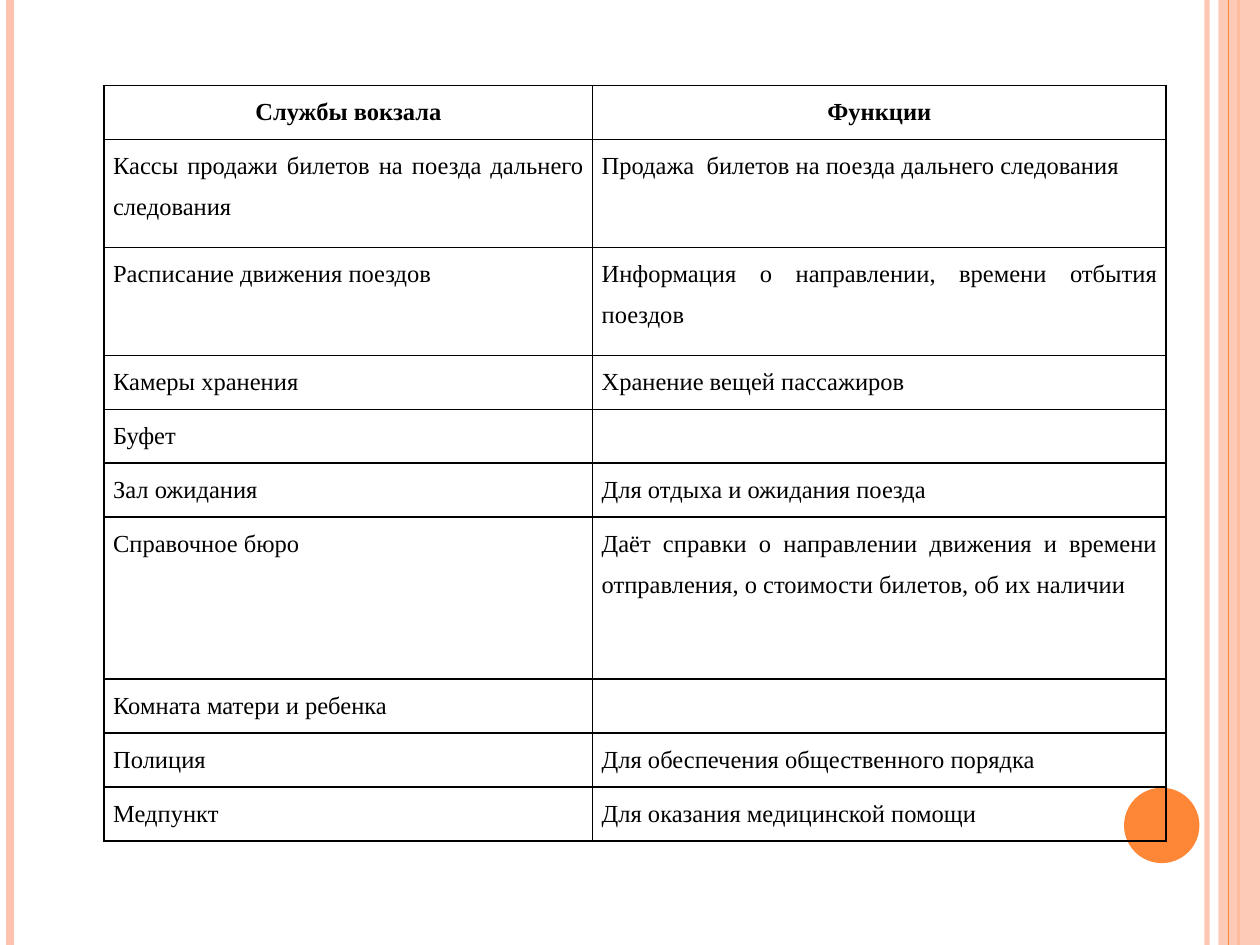
from collections import namedtuple
from dataclasses import dataclass

from lxml.etree import SubElement
from pptx import Presentation
from pptx.dml.color import RGBColor
from pptx.enum.shapes import MSO_CONNECTOR, MSO_SHAPE
from pptx.enum.text import PP_ALIGN
from pptx.oxml.ns import qn
from pptx.util import Cm, Pt

Box = namedtuple("Box", "left top width height")


@dataclass(frozen=True)
class Theme:
    ink: str = "000000"
    peach: str = "FEC3AE"
    orange: str = "FE8637"
    font: str = "Times New Roman"
    text_size: float = 14
    border: float = 1


THEME = Theme()
HEADER = ("Службы вокзала", "Функции")
SERVICES = [
    (2, "Кассы продажи билетов на поезда дальнего следования",
     "Продажа  билетов на поезда дальнего следования"),
    (2, "Расписание движения поездов",
     "Информация о направлении, времени отбытия поездов"),
    (1, "Камеры хранения", "Хранение вещей пассажиров"),
    (1, "Буфет", ""),
    (1, "Зал ожидания", "Для отдыха и ожидания поезда"),
    (3, "Справочное бюро",
     "Даёт справки о направлении движения и времени отправления, "
     "о стоимости билетов, об их наличии"),
    (1, "Комната матери и ребенка", ""),
    (1, "Полиция", "Для обеспечения общественного порядка"),
    (1, "Медпункт", "Для оказания медицинской помощи"),
]


def apply_format(target, values):
    for name, value in values.items():
        setattr(target, name, value)


def set_opacity(element, percent):
    if percent < 100:
        color = element.find(".//" + qn("a:srgbClr"))
        SubElement(color, qn("a:alpha"), val=str(percent * 1000))


def add_stripe(page, box, offset, color, weight, opacity=100):
    left = Cm(box.left + offset)
    stripe = page.shapes.add_connector(
        MSO_CONNECTOR.STRAIGHT, left, Cm(box.top), left, Cm(box.top + box.height))
    stripe.line.color.rgb = RGBColor.from_string(color)
    stripe.line.width = Pt(weight)
    properties = stripe.line._get_or_add_ln().getparent()
    SubElement(properties, qn("a:effectLst"))
    set_opacity(properties, opacity)


def add_plain_shape(page, kind, box, color, opacity=100):
    shape = page.shapes.add_shape(kind, *(Cm(length) for length in box))
    shape.shadow.inherit = False
    shape.fill.solid()
    shape.fill.fore_color.rgb = RGBColor.from_string(color)
    shape.line.fill.background()
    set_opacity(shape.element.spPr, opacity)


def draw_frame(page, box):
    right = box.left + box.width
    add_stripe(page, box, box.width - 1.07, THEME.peach, 3, 93)
    add_stripe(page, box, 0.2, THEME.peach, 4.5)
    add_stripe(page, box, box.width - 0.43, THEME.orange, 1.5)
    band = Box(right - 0.84, box.top, 0.84, box.height)
    add_plain_shape(page, MSO_SHAPE.RECTANGLE, band, THEME.peach, 87)
    add_stripe(page, box, box.width - 0.64, THEME.orange, 0.75)
    disc = Box(right - 2.74, box.top + box.height - 3.17, 1.52, 1.52)
    add_plain_shape(page, MSO_SHAPE.OVAL, disc, THEME.orange)


def add_borders(cell):
    properties = cell._tc.get_or_add_tcPr()
    for side in ("lnL", "lnR", "lnT", "lnB"):
        line = SubElement(properties, qn("a:" + side), w=str(Pt(THEME.border)))
        fill = SubElement(line, qn("a:solidFill"))
        SubElement(fill, qn("a:srgbClr"), val=THEME.ink)


def fill_cell(cell, text, is_header):
    add_borders(cell)
    cell.fill.background()
    apply_format(cell, {"margin_left": Cm(0.18), "margin_right": Cm(0.18),
                        "margin_top": 0, "margin_bottom": 0})
    para = cell.text_frame.paragraphs[0]
    alignment = PP_ALIGN.CENTER if is_header else PP_ALIGN.JUSTIFY
    apply_format(para, {"alignment": alignment, "line_spacing": 1.5})
    if text:
        span = para.add_run()
        span.text = text
        apply_format(span.font, {"name": THEME.font, "size": Pt(THEME.text_size),
                                 "bold": is_header})
        span.font.color.rgb = RGBColor.from_string(THEME.ink)


def draw_services(page, box):
    rows = [(1, *HEADER), *SERVICES]
    unit = box.height / sum(row[0] for row in rows)
    table = page.shapes.add_table(
        len(rows), len(HEADER), *(Cm(length) for length in box)).table
    apply_format(table, {"first_row": False, "horz_banding": False})
    for column, share in zip(table.columns, (0.46, 0.54)):
        column.width = Cm(box.width * share)
    for index, (units, *texts) in enumerate(rows):
        table.rows[index].height = Cm(unit * units)
        for cell, text in zip(table.rows[index].cells, texts):
            fill_cell(cell, text, index == 0)


def main():
    deck = Presentation()
    apply_format(deck, {"slide_width": Cm(25.4), "slide_height": Cm(19.05)})
    page = deck.slides.add_slide(deck.slide_layouts[6])
    draw_frame(page, Box(0, 0, 25.4, 19.05))
    draw_services(page, Box(2.1, 1.72, 21.41, 15.24))
    deck.save("out.pptx")


if __name__ == "__main__":
    main()
